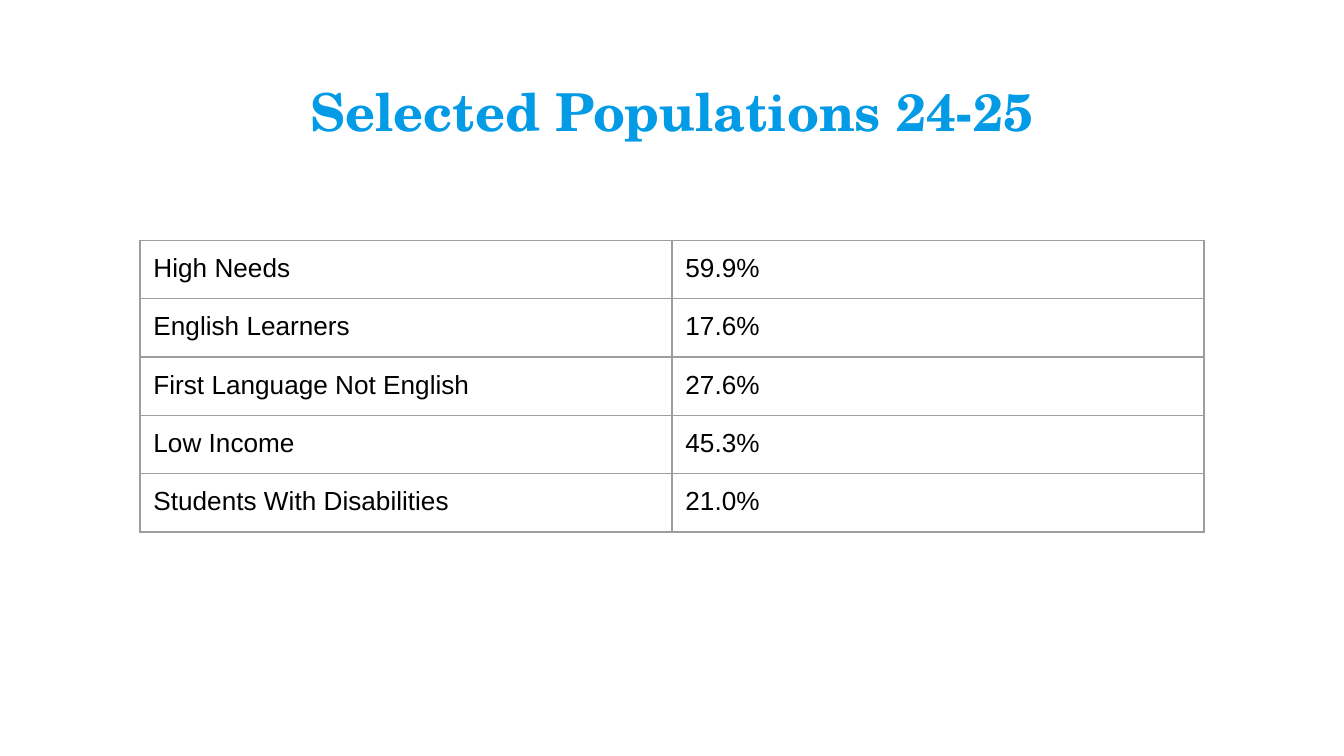
from lxml.etree import SubElement
from pptx import Presentation
from pptx.dml.color import RGBColor
from pptx.enum.text import PP_ALIGN
from pptx.oxml.ns import qn
from pptx.util import Pt

COLORS = {"title": "039BE5", "text": "000000", "border": "9E9E9E"}
INSET = Pt(7.2)
POPULATIONS = [
    ("High Needs", "59.9%"),
    ("English Learners", "17.6%"),
    ("First Language Not English", "27.6%"),
    ("Low Income", "45.3%"),
    ("Students With Disabilities", "21.0%"),
]


def write(tf, text, size=14, font="Arial", color="text", bold=False, align=PP_ALIGN.LEFT):
    """Put one formatted line of text into a text frame."""
    tf.word_wrap = True
    tf.margin_left = tf.margin_right = tf.margin_top = tf.margin_bottom = INSET
    p = tf.paragraphs[0]
    p.alignment = align
    r = p.add_run()
    r.text = text
    r.font.size = Pt(size)
    r.font.name = font
    r.font.bold = bold
    r.font.color.rgb = RGBColor.from_string(COLORS[color])


class Deck:
    """Hold the style and the current slide."""

    def __init__(self, width, height):
        """Start a presentation with one blank slide."""
        self.prs = Presentation()
        self.prs.slide_width, self.prs.slide_height = Pt(width), Pt(height)
        self.s = self.prs.slides.add_slide(self.prs.slide_layouts[6])

    def text(self, x, y, w, h, text, **fmt):
        """Add a text box."""
        sp = self.s.shapes.add_textbox(Pt(x), Pt(y), Pt(w), Pt(h))
        write(sp.text_frame, text, **fmt)

    def border(self, cell, width=0.75):
        """Draw a line on all four sides of a cell."""
        pr = cell._tc.get_or_add_tcPr()
        for i, side in enumerate(("a:lnL", "a:lnR", "a:lnT", "a:lnB")):
            ln = SubElement(pr, qn(side), w=str(Pt(width)))
            pr.insert(i, ln)
            fill = SubElement(ln, qn("a:solidFill"))
            SubElement(fill, qn("a:srgbClr"), val=COLORS["border"])

    def table(self, x, y, w, row_h, rows):
        """Add a bordered table with equal columns and no fill."""
        n, m = len(rows), len(rows[0])
        table = self.s.shapes.add_table(n, m, Pt(x), Pt(y), Pt(w), Pt(row_h * n)).table
        table.first_row = table.horz_banding = False
        for i, row in enumerate(rows):
            table.rows[i].height = Pt(row_h)
            for j, text in enumerate(row):
                cell = table.cell(i, j)
                cell.fill.background()
                cell.margin_left = cell.margin_right = INSET
                cell.margin_top = cell.margin_bottom = INSET
                write_cell = cell.text_frame
                p = write_cell.paragraphs[0]
                r = p.add_run()
                r.text = text
                r.font.size = Pt(14)
                r.font.name = "Arial"
                r.font.color.rgb = RGBColor.from_string(COLORS["text"])
                self.border(cell)


def main():
    """Build and save the slide."""
    deck = Deck(720, 405)
    deck.text(24.5, 35.3, 671, 45.4, "Selected Populations 24-25", size=28,
              font="TeX Gyre Schola", color="title", bold=True, align=PP_ALIGN.CENTER)
    deck.table(75, 128.8, 570, 30.1, POPULATIONS)
    deck.prs.save("out.pptx")


if __name__ == "__main__":
    main()
